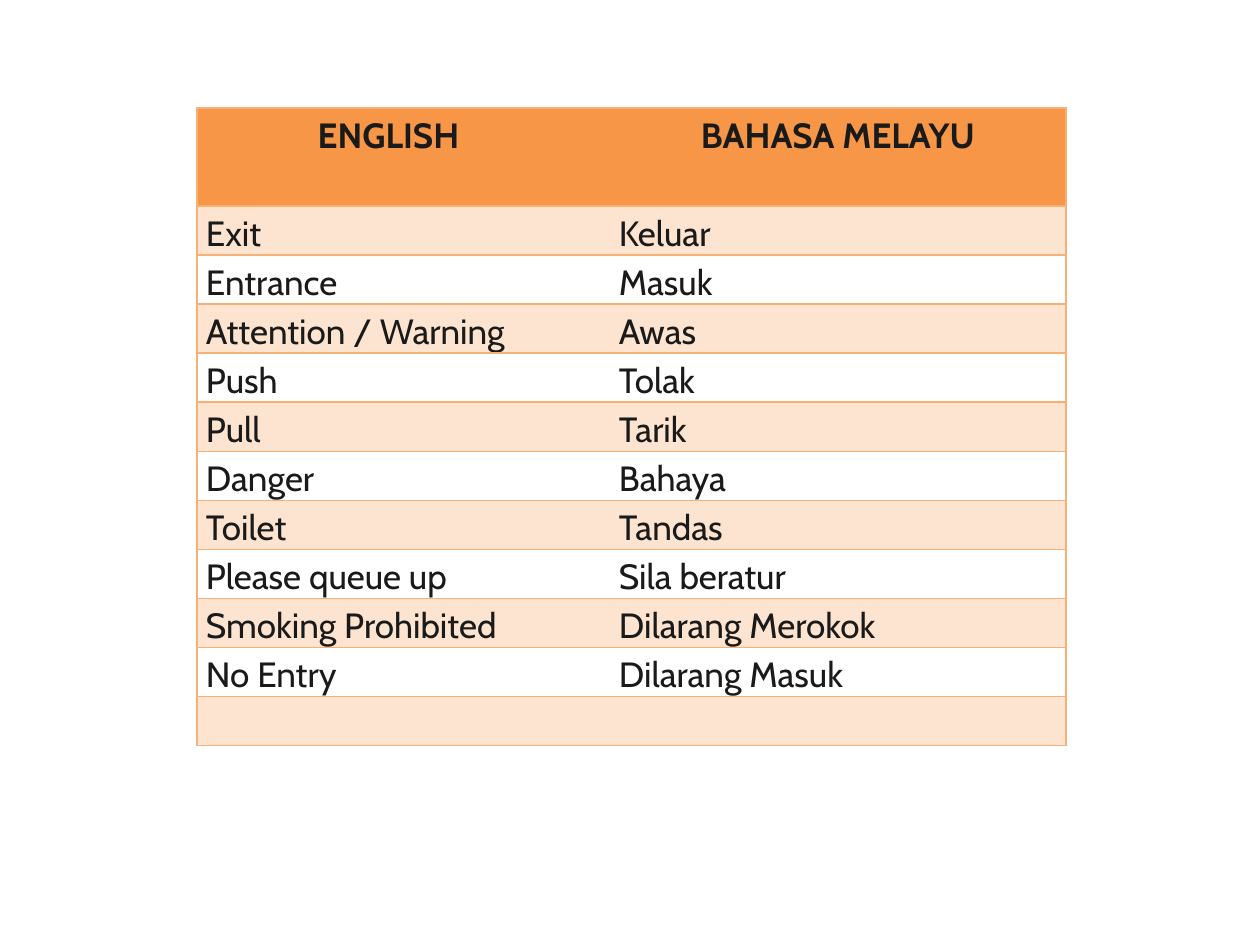
from lxml.etree import SubElement
from pptx import Presentation
from pptx.dml.color import RGBColor
from pptx.enum.text import PP_ALIGN as Align
from pptx.oxml.ns import qn
from pptx.util import Pt

PX = 914400 / 126
FONT, INK = "Cabin", "1A1A1A"
HEAD, BAND, EDGE = "F79646", "FDE4D0", "F9B074"
PLAIN = "{2D5ABB26-0587-4C30-8999-92F81FD0307C}"  # no style, no grid
COLS = [383, 30, 456]
HEAD_H, ROW_H = 98, 49
WORDS = [
    ("ENGLISH", "BAHASA MELAYU"),
    ("Exit", "Keluar"),
    ("Entrance", "Masuk"),
    ("Attention / Warning", "Awas"),
    ("Push", "Tolak"),
    ("Pull", "Tarik"),
    ("Danger", "Bahaya"),
    ("Toilet", "Tandas"),
    ("Please queue up", "Sila beratur"),
    ("Smoking Prohibited", "Dilarang Merokok"),
    ("No Entry", "Dilarang Masuk"),
    ("", ""),
]


def px(n):
    return round(n * PX)


def rgb(code):
    return RGBColor.from_string(code)


def border(cell, sides):
    for side in sides:
        line = SubElement(cell._tc.get_or_add_tcPr(), qn("a:ln" + side), w=str(Pt(1)))
        fill = SubElement(line, qn("a:solidFill"))
        SubElement(fill, qn("a:srgbClr"), val=EDGE)


def paint(cell, code):
    if code:
        cell.fill.solid()
        cell.fill.fore_color.rgb = rgb(code)
    else:
        cell.fill.background()


def write(cell, text, head):
    cell.margin_left = cell.margin_right = px(9)
    cell.margin_top = cell.margin_bottom = 0
    if not text:
        return
    cell.text_frame.text = text
    para = cell.text_frame.paragraphs[0]
    para.line_spacing = 1.15
    para.alignment = Align.CENTER if head else Align.LEFT
    font = para.runs[0].font
    font.name, font.size, font.bold = FONT, Pt(20), head
    font.color.rgb = rgb(INK)


def word_table(slide, left, top):
    high = HEAD_H + ROW_H * (len(WORDS) - 1)
    frame = slide.shapes.add_table(len(WORDS), len(COLS), px(left), px(top),
                                   px(sum(COLS)), px(high))
    table = frame.table
    table._tbl.tblPr.find(qn("a:tableStyleId")).text = PLAIN
    for col, wide in zip(table.columns, COLS):
        col.width = px(wide)
    for r, (english, malay) in enumerate(WORDS):
        head = r == 0
        table.rows[r].height = px(HEAD_H if head else ROW_H)
        tint = HEAD if head else BAND if r % 2 else None
        # The narrow middle column is a gap between the languages
        for c, (text, sides) in enumerate(zip((english, "", malay), ("LTB", "TB", "RTB"))):
            cell = table.cell(r, c)
            border(cell, sides)
            paint(cell, tint)
            write(cell, text, head)


def main():
    deck = Presentation()
    deck.slide_width, deck.slide_height = px(1260), px(945)
    slide = deck.slides.add_slide(deck.slide_layouts[6])
    word_table(slide, 197, 108)
    deck.save("out.pptx")


if __name__ == "__main__":
    main()
